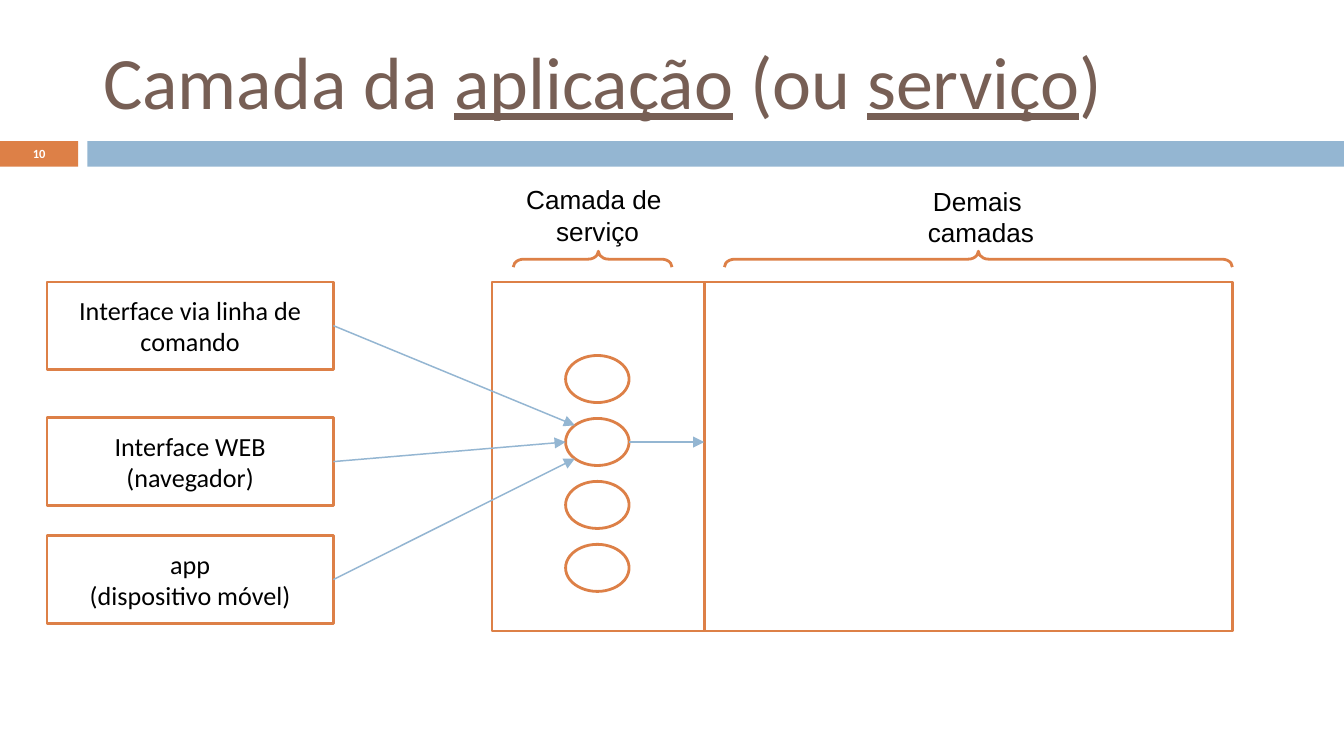
from math import cos, pi, sin
from typing import NamedTuple

from lxml import etree
from pptx import Presentation
from pptx.dml.color import RGBColor
from pptx.enum.shapes import MSO_CONNECTOR, MSO_SHAPE
from pptx.enum.text import MSO_ANCHOR, PP_ALIGN
from pptx.oxml.ns import qn
from pptx.util import Cm, Pt

RECTANGLE, OVAL, BRACE = MSO_SHAPE.RECTANGLE, MSO_SHAPE.OVAL, MSO_SHAPE.LEFT_BRACE
STRAIGHT = MSO_CONNECTOR.STRAIGHT
MIDDLE, TOP = MSO_ANCHOR.MIDDLE, MSO_ANCHOR.TOP
LEFT, CENTER = PP_ALIGN.LEFT, PP_ALIGN.CENTER
RIGHT_SIDE = 3

ORANGE = RGBColor(0xDD, 0x80, 0x47)
BLUE = RGBColor(0x94, 0xB6, 0xD2)
BROWN = RGBColor(0x77, 0x5F, 0x55)
WHITE = RGBColor(0xFF, 0xFF, 0xFF)
BLACK = RGBColor(0, 0, 0)


class Frame(NamedTuple):
    """A place on the page, in centimetres."""
    left: float
    top: float
    width: float
    height: float

    def lengths(self) -> list:
        return [Cm(value) for value in self]


class Span(NamedTuple):
    text: str
    underline: bool = False


class Style(NamedTuple):
    font: str
    size: float
    color: RGBColor
    bold: bool = False


class Interface(NamedTuple):
    top: float
    lines: list
    tip_angle: float  # where its arrow meets the service oval, in radians


class Label(NamedTuple):
    frame: Frame
    lines: list
    brace_center: float
    brace_span: float
    brace_tip: float


TITLE = [Span("Camada da "), Span("aplicação", True), Span(" (ou "),
         Span("serviço", True), Span(")")]
TITLE_STYLE = Style("Calibri", 39.6, BROWN)
NUMBER_STYLE = Style("Calibri", 6.7, WHITE, True)
BOX_STYLE = Style("Calibri", 14, BLACK)
LABEL_STYLE = Style("Arial", 14, BLACK)

SYSTEM = Frame(9.3, 5.33, 14, 6.6)
DIVIDER_X = 13.31
SERVICES = [Frame(10.69, 6.72 + 1.19 * row, 1.2, 0.89) for row in range(4)]
INTERFACES = [
    Interface(5.33, ["Interface via linha de comando"], 1.25 * pi),
    Interface(7.9, ["Interface WEB (navegador)"], pi),
    Interface(10.13, ["app", "(dispositivo móvel)"], 0.75 * pi),
]
LABELS = [
    Label(Frame(17.27, 3.38, 2.54, 1.45), ["Demais ", "camadas"], 18.49, 9.6, 0.5),
    Label(Frame(9.68, 3.35, 3.23, 1.45), ["Camada de ", "serviço"], 11.2, 3, 0.464),
]
BRACE_Y, BRACE_DEPTH = 4.9, 0.3


def write(shape, lines: list, style: Style, align=CENTER, anchor=MIDDLE, wrap=True) -> None:
    """Fill a shape with paragraphs, each given as a list of spans."""
    text_frame = shape.text_frame
    text_frame.word_wrap = wrap
    text_frame.vertical_anchor = anchor
    for index, spans in enumerate(lines):
        para = text_frame.add_paragraph() if index else text_frame.paragraphs[0]
        para.alignment = align
        for span in spans:
            run = para.add_run()
            run.text = span.text
            run.font.name = style.font
            run.font.size = Pt(style.size)
            run.font.bold = style.bold
            run.font.underline = span.underline
            run.font.color.rgb = style.color


def plain(lines: list) -> list:
    return [[Span(line)] for line in lines]


def add_text(page, frame: Frame, lines: list, style: Style, **layout):
    box = page.shapes.add_textbox(*frame.lengths())
    write(box, lines, style, **layout)
    return box


def add_bar(page, frame: Frame, color: RGBColor) -> None:
    bar = page.shapes.add_shape(RECTANGLE, *frame.lengths())
    bar.shadow.inherit = False
    bar.fill.solid()
    bar.fill.fore_color.rgb = color
    bar.line.fill.background()


def add_outlined(page, kind, frame: Frame):
    shape = page.shapes.add_shape(kind, *frame.lengths())
    shape.shadow.inherit = False
    shape.fill.solid()
    shape.fill.fore_color.rgb = WHITE
    shape.line.color.rgb = ORANGE
    shape.line.width = Pt(1.5)
    return shape


def add_line(page, start: tuple, end: tuple, color: RGBColor, width: float):
    ends = [Cm(value) for value in (*start, *end)]
    line = page.shapes.add_connector(STRAIGHT, *ends)
    line.line.color.rgb = color
    line.line.width = Pt(width)
    etree.SubElement(line._element.spPr, qn("a:effectLst"))
    return line


def add_arrow(page, start: tuple, end: tuple):
    arrow = add_line(page, start, end, BLUE, 0.79)
    outline = arrow._element.spPr.find(qn("a:ln"))
    etree.SubElement(outline, qn("a:tailEnd"), type="triangle")
    return arrow


def oval_point(oval: Frame, angle: float) -> tuple:
    return (oval.left + oval.width / 2 * (1 + cos(angle)),
            oval.top + oval.height / 2 * (1 + sin(angle)))


def add_label(page, label: Label) -> None:
    """Draw a brace turned to point up, with its caption above."""
    brace = add_outlined(page, BRACE, Frame(
        label.brace_center - BRACE_DEPTH / 2, BRACE_Y - label.brace_span / 2,
        BRACE_DEPTH, label.brace_span))
    brace.rotation = 90
    brace.adjustments[0] = 0.651
    brace.adjustments[1] = label.brace_tip
    add_text(page, label.frame, plain(label.lines), LABEL_STYLE, anchor=TOP, wrap=False)


def add_interface(page, interface: Interface) -> None:
    frame = Frame(0.89, interface.top, 5.41, 1.65)
    box = add_outlined(page, RECTANGLE, frame)
    write(box, plain(interface.lines), BOX_STYLE)
    start = (frame.left + frame.width, frame.top + frame.height / 2)
    arrow = add_arrow(page, start, oval_point(SERVICES[1], interface.tip_angle))
    arrow.begin_connect(box, RIGHT_SIDE)


def main() -> None:
    deck = Presentation()
    deck.slide_width, deck.slide_height = Cm(25.4), Cm(14.29)
    page = deck.slides.add_slide(deck.slide_layouts[6])

    add_bar(page, Frame(0, 2.67, 1.48, 0.48), ORANGE)
    add_bar(page, Frame(1.65, 2.67, 23.75, 0.48), BLUE)
    add_text(page, Frame(1.7, 0.48, 22.66, 2.06), [TITLE], TITLE_STYLE, align=LEFT)
    add_text(page, Frame(0, 2.65, 1.48, 0.5), plain(["10"]), NUMBER_STYLE)

    add_outlined(page, RECTANGLE, SYSTEM)
    add_line(page, (DIVIDER_X, SYSTEM.top), (DIVIDER_X, SYSTEM.top + SYSTEM.height),
             ORANGE, 1.5)
    for service in SERVICES:
        add_outlined(page, OVAL, service)
    for label in LABELS:
        add_label(page, label)
    for interface in INTERFACES:
        add_interface(page, interface)
    exit_point = oval_point(SERVICES[1], 0)
    add_arrow(page, exit_point, (DIVIDER_X, exit_point[1]))

    deck.save("out.pptx")


if __name__ == "__main__":
    main()
